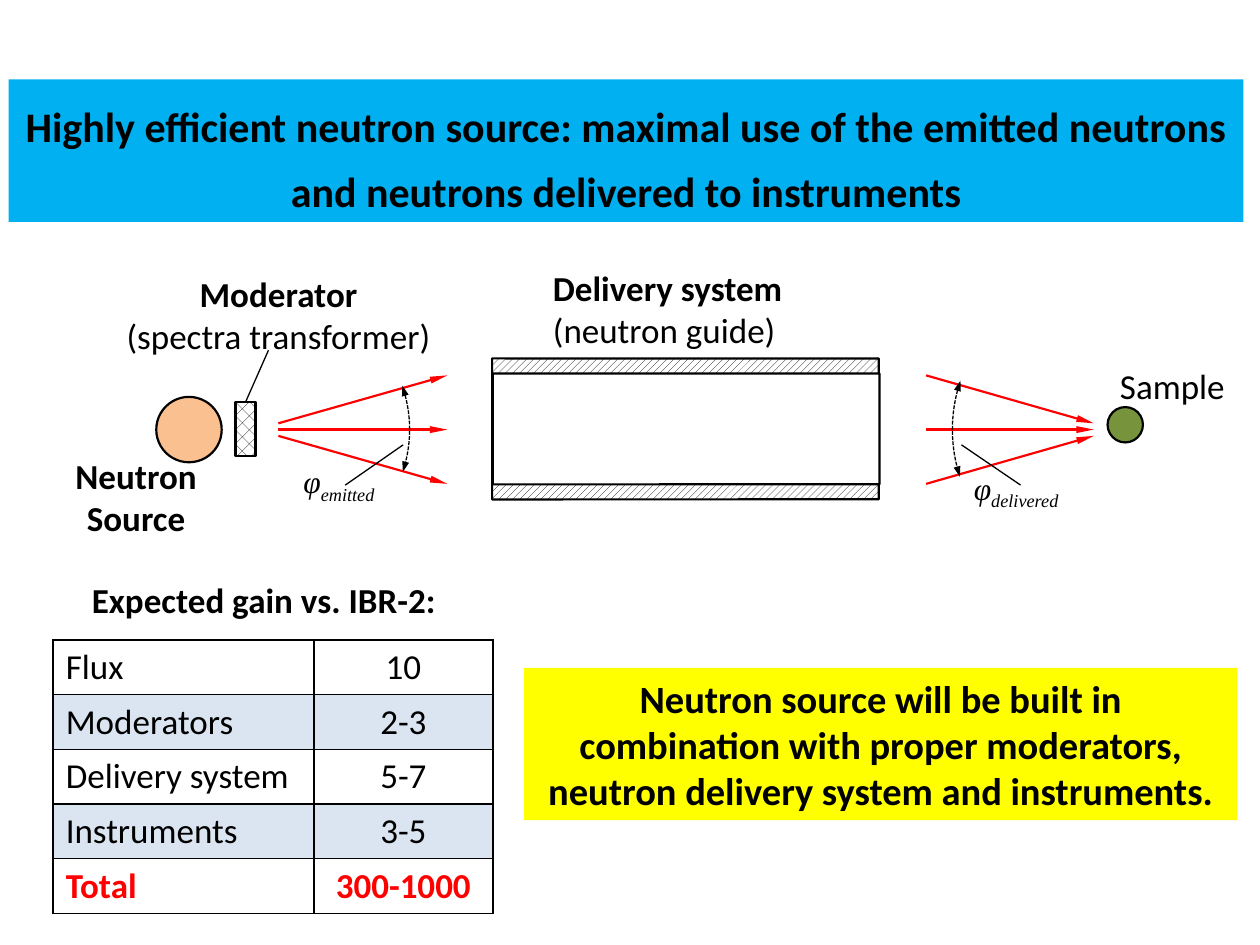
from dataclasses import dataclass

from lxml import etree
from pptx import Presentation
from pptx.dml.color import RGBColor
from pptx.enum.dml import MSO_LINE, MSO_PATTERN
from pptx.enum.shapes import MSO_CONNECTOR, MSO_SHAPE
from pptx.enum.text import MSO_ANCHOR, PP_ALIGN
from pptx.oxml.ns import qn
from pptx.util import Pt

RECT, OVAL = MSO_SHAPE.RECTANGLE, MSO_SHAPE.OVAL
TRAPEZOID, ARC = MSO_SHAPE.TRAPEZOID, MSO_SHAPE.ARC
LEFT, CENTER = PP_ALIGN.LEFT, PP_ALIGN.CENTER
HATCH, DOTS = MSO_PATTERN.WIDE_UPWARD_DIAGONAL, MSO_PATTERN.PERCENT_25
BLACK, WHITE, RED = "000000", "FFFFFF", "FF0000"
SANS, SERIF = "Calibri", "Times New Roman"
AXIS = 245.5  # height of the beam axis


@dataclass
class Run:
    text: str
    size: float = 20
    bold: bool = False
    italic: bool = False
    font: str = SANS
    color: str = BLACK
    base: int = 0


@dataclass
class Label:
    box: tuple
    paras: list
    align: PP_ALIGN = LEFT
    wrap: bool = True


@dataclass
class Part:
    kind: MSO_SHAPE
    box: tuple
    fill: str
    pattern: MSO_PATTERN | None = None
    rotation: float = 0


@dataclass
class Fan:
    start: float
    end: float
    start_spread: float
    end_spread: float


def rgb(value: str) -> RGBColor:
    return RGBColor.from_string(value)


def write(tf, paras: list, align: PP_ALIGN = LEFT, spacing: float | None = None) -> None:
    for i, runs in enumerate(paras):
        p = tf.add_paragraph() if i else tf.paragraphs[0]
        p.alignment = align
        if spacing:
            p.line_spacing = spacing
        for run in runs:
            r = p.add_run()
            r.text = run.text
            f = r.font
            f.name, f.size = run.font, Pt(run.size)
            f.bold, f.italic = run.bold, run.italic
            f.color.rgb = rgb(run.color)
            if run.base:
                f._element.set("baseline", str(run.base * 1000))


def add_label(s, label: Label) -> None:
    tf = s.shapes.add_textbox(*map(Pt, label.box)).text_frame
    tf.word_wrap = label.wrap
    write(tf, label.paras, label.align)


def add_part(s, part: Part):
    sp = s.shapes.add_shape(part.kind, *map(Pt, part.box))
    sp.shadow.inherit = False
    sp.rotation = part.rotation
    if part.pattern is None:
        sp.fill.solid()
        sp.fill.fore_color.rgb = rgb(part.fill)
    else:
        sp.fill.patterned()
        sp.fill.pattern = part.pattern
        sp.fill.fore_color.rgb = rgb(BLACK)
        sp.fill.back_color.rgb = rgb(part.fill)
    sp.line.color.rgb = rgb(BLACK)
    sp.line.width = Pt(1.25)
    if part.kind == TRAPEZOID:
        sp.adjustments[0] = 0.001
    return sp


def add_banner(s, box: tuple, fill: str, run: Run, spacing: float | None = None) -> None:
    sp = add_part(s, Part(RECT, box, fill))
    sp.line.fill.background()
    tf = sp.text_frame
    tf.word_wrap = True
    tf.vertical_anchor = MSO_ANCHOR.MIDDLE
    write(tf, [[run]], CENTER, spacing)


def add_arrowhead(line, end: str, length: str) -> None:
    etree.SubElement(line._get_or_add_ln(), qn(f"a:{end}"), type="triangle", w="sm", len=length)


def add_line(s, x1: float, y1: float, x2: float, y2: float, color: str = BLACK, width: float = 0.75):
    cx = s.shapes.add_connector(MSO_CONNECTOR.STRAIGHT, Pt(x1), Pt(y1), Pt(x2), Pt(y2))
    cx.line.color.rgb = rgb(color)
    cx.line.width = Pt(width)
    etree.SubElement(cx._element.spPr, qn("a:effectLst"))
    return cx


def add_fan(s, fan: Fan) -> None:
    for side in (-1, 0, 1):
        cx = add_line(s, fan.start, AXIS + side * fan.start_spread,
                      fan.end, AXIS + side * fan.end_spread, RED, 1.25)
        add_arrowhead(cx.line, "tailEnd", "lg")


def add_angle(s, left: float, size: float, rotation: float, flip: bool) -> None:
    sp = s.shapes.add_shape(ARC, Pt(left), Pt(AXIS - size / 2), Pt(size), Pt(size))
    sp.shadow.inherit = False
    sp.fill.background()
    sp.rotation = rotation
    if flip:
        sp._element.spPr.get_or_add_xfrm().set("flipH", "1")
    sp.adjustments[0], sp.adjustments[1] = 177.86, 199.61
    sp.line.color.rgb = rgb(BLACK)
    sp.line.width = Pt(0.75)
    sp.line.dash_style = MSO_LINE.SQUARE_DOT
    for end in ("headEnd", "tailEnd"):
        add_arrowhead(sp.line, end, "med")


def add_borders(cell) -> None:
    tcPr = cell._tc.get_or_add_tcPr()
    for i, side in enumerate(("lnL", "lnR", "lnT", "lnB")):
        ln = etree.Element(qn(f"a:{side}"), w=str(Pt(1)))
        fill = etree.SubElement(ln, qn("a:solidFill"))
        etree.SubElement(fill, qn("a:srgbClr"), val=BLACK)
        tcPr.insert(i, ln)


def add_gain_table(s, rows: list) -> None:
    row_h, widths = 31.25, (149, 102.3)
    tbl = s.shapes.add_table(len(rows), len(widths), Pt(30.4), Pt(365.7),
                             Pt(sum(widths)), Pt(row_h * len(rows))).table
    tbl.first_row = tbl.horz_banding = False
    for col, width in zip(tbl.columns, widths):
        col.width = Pt(width)
    for i, row in enumerate(rows):
        tbl.rows[i].height = Pt(row_h)
        total = i == len(rows) - 1
        for j, text in enumerate(row):
            cell = tbl.cell(i, j)
            if i % 2:
                cell.fill.solid()
                cell.fill.fore_color.rgb = rgb("4F81BD")
                clr = cell._tc.tcPr.find(".//" + qn("a:srgbClr"))
                etree.SubElement(clr, qn("a:alpha"), val="20000")
            else:
                cell.fill.background()
            add_borders(cell)
            run = Run(text, bold=total, color=RED if total else BLACK)
            write(cell.text_frame, [[run]], CENTER if j else LEFT)


def phi(index: str) -> list:
    return [[Run("φ", 18, italic=True, font=SERIF),
             Run(index, 18, italic=True, font=SERIF, base=-25)]]


def main() -> None:
    prs = Presentation()
    prs.slide_width, prs.slide_height = Pt(720), Pt(540)
    s = prs.slides.add_slide(prs.slide_layouts[6])

    # Banners
    add_banner(s, (299.5, 381.6, 407.5, 87.1), "FFFF00",
               Run("Neutron source will be built in combination with proper moderators, "
                   "neutron delivery system and instruments.", 22, True))
    add_banner(s, (5, 45.4, 705.6, 81.4), "00B0F0",
               Run("Highly efficient neutron source: maximal use of the emitted neutrons "
                   "and neutrons delivered to instruments", 24, True), 1.3)

    # Sample, guide walls, guide channel, source
    for part in (Part(OVAL, (632.9, 232.6, 20.2, 20.2), "77933C"),
                 Part(TRAPEZOID, (351.4, 134.6, 80.6, 221), WHITE, HATCH, 90),
                 Part(TRAPEZOID, (360.4, 134.6, 63.4, 221), WHITE, rotation=90),
                 Part(OVAL, (89.3, 226.8, 37.4, 37.4), "FAC090")):
        add_part(s, part)
    moderator = add_part(s, Part(RECT, (134.6, 229.7, 11.5, 31), WHITE, DOTS))

    # Neutron beams and their angles
    add_fan(s, Fan(159.1, 255.6, 3.6, 31))
    add_fan(s, Fan(529.2, 625, 31, 3.6))
    add_angle(s, 75.6, 158.4, 45.1, False)
    add_angle(s, 544.3, 176.4, 314.9, True)

    # Leader lines
    add_line(s, 230.4, 254.2, 197.3, 277.2)
    add_line(s, 549.4, 254.2, 583.2, 277.2)
    add_line(s, 153.4, 200.2, 140.3, 229.7).end_connect(moderator, 0)

    # Labels
    for label in (
        Label((632.9, 204.5, 82.8, 31.5), [[Run("Sample")]]),
        Label((28.1, 256.3, 99.4, 55.7), [[Run("Neutron Source", bold=True)]], CENTER),
        Label((308.9, 149, 180, 55.7),
              [[Run("Delivery system", bold=True)], [Run("(neutron guide)")]]),
        Label((52.6, 151.9, 213.1, 55.7),
              [[Run("Moderator", bold=True)], [Run("(spectra transformer)")]], CENTER),
        Label((166.3, 260.6, 115.2, 34.6), phi("emitted")),
        Label((549.4, 264.2, 88.6, 34.6), phi("delivered")),
        Label((45.4, 326.9, 213.1, 31.5), [[Run("Expected gain vs. IBR-2:", bold=True)]], wrap=False),
    ):
        add_label(s, label)

    # Expected gain
    add_gain_table(s, [("Flux", "10"), ("Moderators", "2-3"), ("Delivery system", "5-7"),
                       ("Instruments", "3-5"), ("Total", "300-1000")])

    prs.save("out.pptx")


if __name__ == "__main__":
    main()
